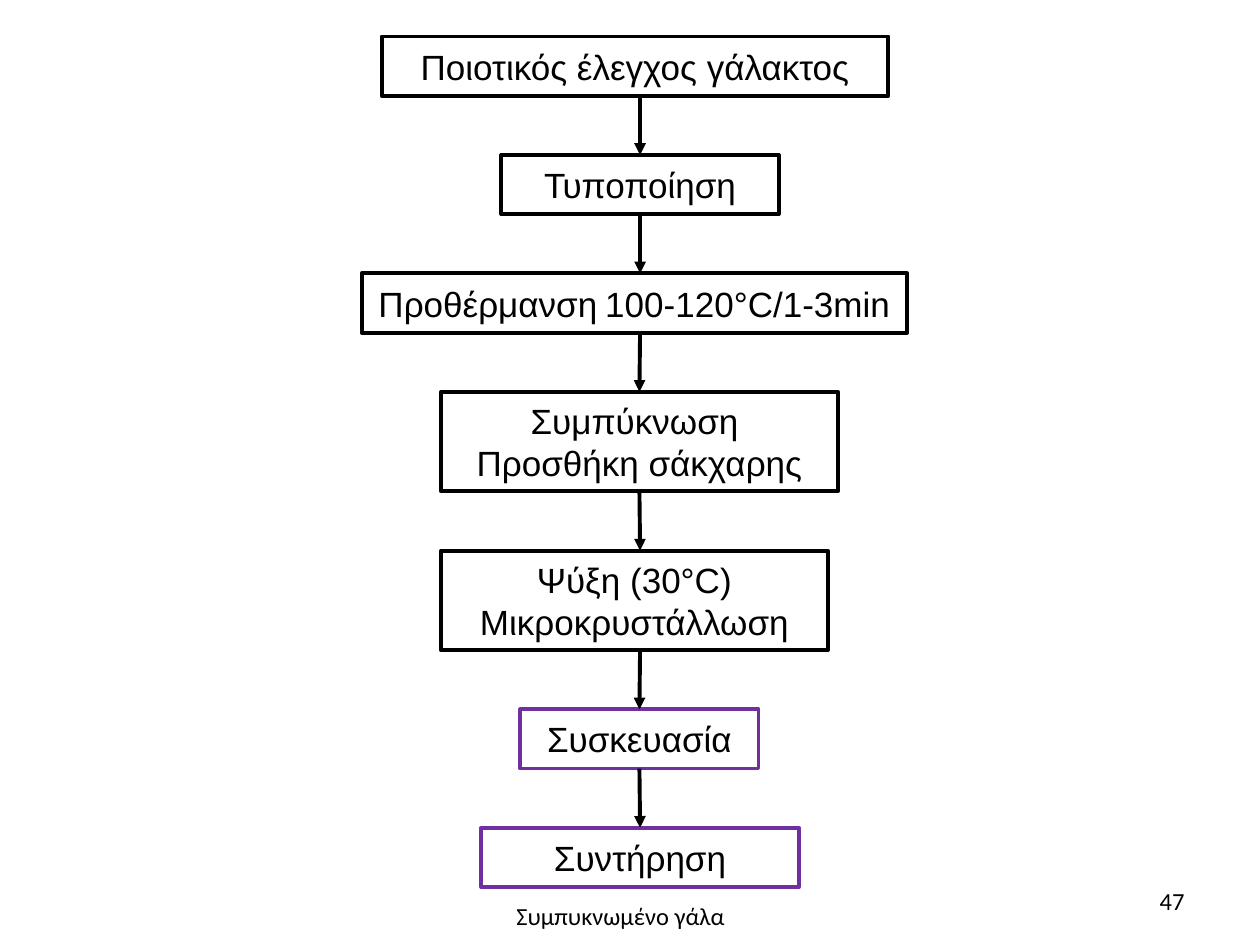
import dataclasses
import itertools

import lxml.etree
import pptx
import pptx.dml.color
import pptx.enum.shapes
import pptx.enum.text
import pptx.oxml.ns
import pptx.util
from pptx.util import Inches

BLACK = pptx.dml.color.RGBColor(0x00, 0x00, 0x00)
PURPLE = pptx.dml.color.RGBColor(0x70, 0x30, 0xA0)
ALIGN = pptx.enum.text.PP_ALIGN
ANCHOR = pptx.enum.text.MSO_ANCHOR
LINE_WIDTH = pptx.util.Pt(2.25)

FIRST_TOP = 0.29
GAP = 0.47
ONE_LINE = 0.47
TWO_LINES = 0.79
AXIS = 5.08
JOIN_TOLERANCE = 0.01


@dataclasses.dataclass(frozen=True)
class Span:
    text: str
    size: float = 20
    font: str = "Arial"


@dataclasses.dataclass(frozen=True)
class Step:
    left: float
    width: float
    lines: list[list[Span]]
    color: pptx.dml.color.RGBColor = BLACK

    @property
    def height(self) -> float:
        return ONE_LINE if len(self.lines) == 1 else TWO_LINES

    @property
    def on_axis(self) -> bool:
        return abs(self.left + self.width / 2 - AXIS) < JOIN_TOLERANCE


STEPS = [
    Step(3.03, 4.02, [[Span("Ποιοτικός έλεγχος γάλακτος")]]),
    Step(3.98, 2.2, [[Span("Τυποποίηση")]]),
    Step(2.87, 4.33, [[Span("Προθέρμανση"), Span(" ", 16), Span("100-120°C/1-3min")]]),
    Step(3.5, 3.15, [[Span("Συμπύκνωση ")], [Span("Προσθήκη σάκχαρης")]]),
    Step(3.5, 3.07, [[Span("Ψύξη (30°C)")], [Span("Μικροκρυστάλλωση")]]),
    Step(4.13, 1.89, [[Span("Συσκευασία")]], PURPLE),
    Step(3.82, 2.52, [[Span("Συντήρηση")]], PURPLE),
]


def write_lines(frame, lines: list[list[Span]], align, anchor) -> None:
    frame.word_wrap = True
    frame.vertical_anchor = anchor
    for index, spans in enumerate(lines):
        para = frame.add_paragraph() if index else frame.paragraphs[0]
        para.alignment = align
        for span in spans:
            run = para.add_run()
            run.text = span.text
            run.font.name = span.font
            run.font.size = pptx.util.Pt(span.size)
            run.font.color.rgb = BLACK


def add_step(page, step: Step, top: float):
    box = page.shapes.add_shape(
        pptx.enum.shapes.MSO_SHAPE.RECTANGLE,
        Inches(step.left), Inches(top), Inches(step.width), Inches(step.height),
    )
    box.shadow.inherit = False
    box.fill.background()
    box.line.color.rgb = step.color
    box.line.width = LINE_WIDTH
    write_lines(box.text_frame, step.lines, ALIGN.CENTER, ANCHOR.MIDDLE)
    return box


def add_arrow(page, top: float, bottom: float):
    arrow = page.shapes.add_connector(
        pptx.enum.shapes.MSO_CONNECTOR.STRAIGHT,
        Inches(AXIS), Inches(top), Inches(AXIS), Inches(bottom),
    )
    arrow.line.color.rgb = BLACK
    arrow.line.width = LINE_WIDTH
    qn = pptx.oxml.ns.qn
    lxml.etree.SubElement(arrow.line._get_or_add_ln(), qn("a:tailEnd"), type="triangle")
    lxml.etree.SubElement(arrow._element.spPr, qn("a:effectLst"))
    return arrow


def add_label(page, left: float, top: float, width: float, height: float,
              text: str, align, anchor) -> None:
    box = page.shapes.add_textbox(Inches(left), Inches(top), Inches(width), Inches(height))
    write_lines(box.text_frame, [[Span(text, 14, "Calibri")]], align, anchor)


def add_flow(page) -> None:
    """Stack the steps with equal gaps; join arrows only to boxes centred on the axis."""
    tops = [FIRST_TOP]
    for step in STEPS[:-1]:
        tops.append(tops[-1] + step.height + GAP)
    boxes = [add_step(page, step, top) for step, top in zip(STEPS, tops)]
    placed = zip(STEPS, tops, boxes)
    for (step, top, box), (next_step, next_top, next_box) in itertools.pairwise(placed):
        arrow = add_arrow(page, top + step.height, next_top)
        if step.on_axis:
            arrow.begin_connect(box, 2)
        if next_step.on_axis:
            arrow.end_connect(next_box, 0)


def main() -> None:
    deck = pptx.Presentation()
    deck.slide_width = Inches(10)
    deck.slide_height = Inches(7.5)
    page = deck.slides.add_slide(deck.slide_layouts[6])
    add_label(page, 7.17, 6.95, 2.33, 0.4, "47", ALIGN.RIGHT, ANCHOR.MIDDLE)
    add_flow(page)
    add_label(page, 3.18, 7.1, 3.49, 0.28, "Συμπυκνωμένο γάλα", ALIGN.CENTER, ANCHOR.TOP)
    deck.save("out.pptx")


if __name__ == "__main__":
    main()
